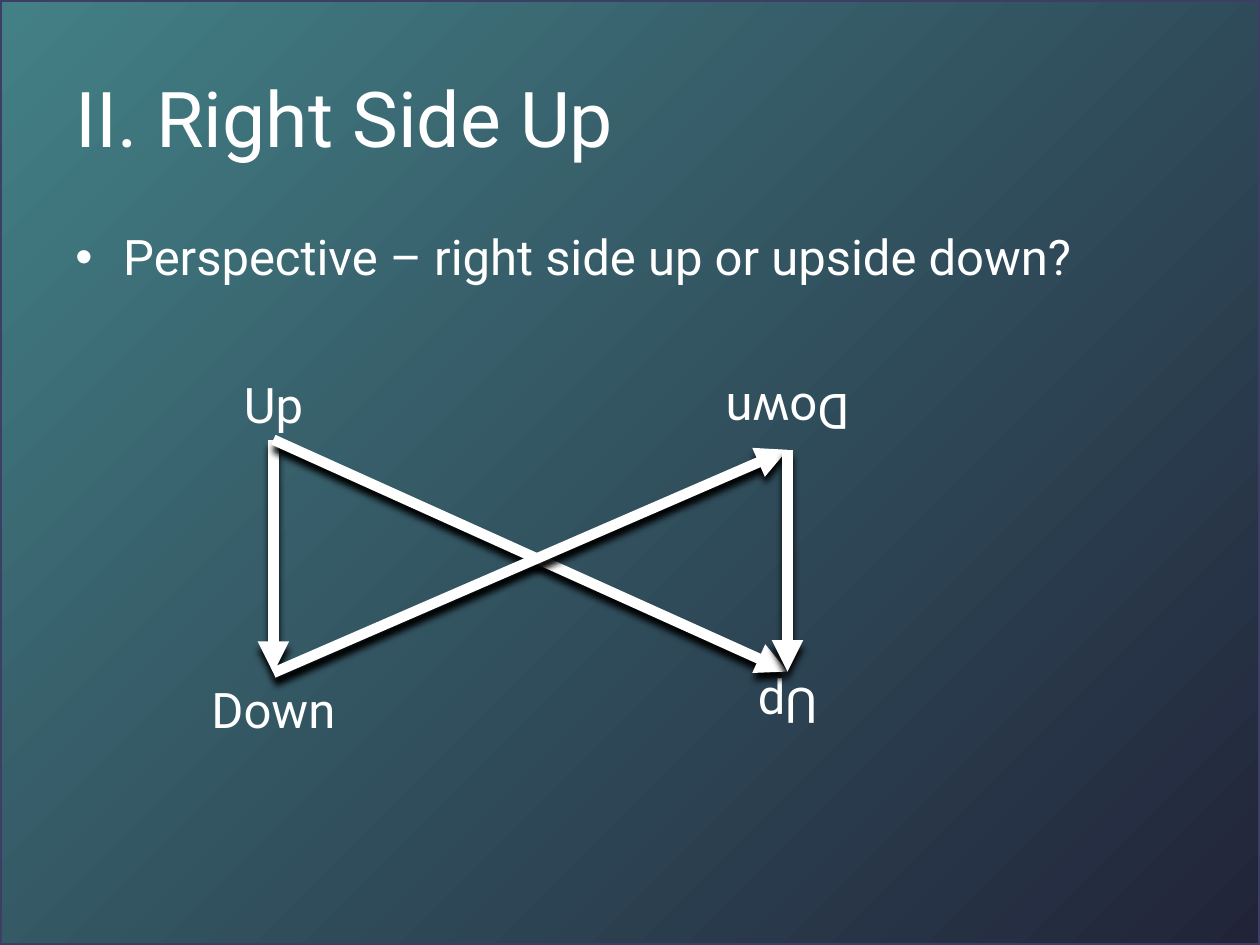
from dataclasses import dataclass

from lxml.etree import SubElement
from pptx import Presentation
from pptx.dml.color import RGBColor
from pptx.enum.shapes import MSO_CONNECTOR, MSO_SHAPE
from pptx.enum.text import MSO_ANCHOR, MSO_AUTO_SIZE, PP_ALIGN
from pptx.oxml import parse_xml
from pptx.oxml.ns import nsdecls, qn
from pptx.util import Inches, Pt

COLORS = {
    "teal": "438086",
    "navy": "212439",
    "frame": "3D3E66",
    "white": "FFFFFF",
    "shadow": "000000",
}
FONT = "Roboto"
LABEL_WIDTH, LABEL_HEIGHT = 2.5, 0.57
TOP, BOTTOM = 0, 2  # connection sites


@dataclass(frozen=True)
class Label:
    text: str
    left: float
    top: float
    rotation: int = 0

    def edge(self, side: int) -> tuple:
        """Middle of the visible top or bottom side."""
        y = self.top + (LABEL_HEIGHT if side == BOTTOM else 0)
        return Inches(self.left + LABEL_WIDTH / 2), Inches(y)

    def site(self, side: int) -> int:
        """A label turned upside down swaps its top and bottom sites."""
        return BOTTOM - side if self.rotation else side


@dataclass(frozen=True)
class Arrow:
    start: str
    start_side: int
    end: str
    end_side: int


LABELS = {
    "left up": Label("Up", 0.92, 2.92),
    "left down": Label("Down", 0.92, 5.34),
    "right up": Label("Up", 5, 5.33, 180),
    "right down": Label("Down", 5, 3, 180),
}
ARROWS = [
    Arrow("left up", BOTTOM, "left down", TOP),
    Arrow("left up", BOTTOM, "right up", TOP),
    Arrow("left down", TOP, "right down", BOTTOM),
    Arrow("right down", BOTTOM, "right up", TOP),
]


def rgb(name: str) -> RGBColor:
    return RGBColor.from_string(COLORS[name])


def paint_background(page) -> None:
    fill = page.background.fill
    fill.gradient()
    for stop, name, position in zip(fill.gradient_stops, ("teal", "navy"), (0, 1)):
        stop.color.rgb = rgb(name)
        stop.position = position
    # Spread the gradient from the top left corner
    gradient = page.background._cSld.find(".//" + qn("a:gradFill"))
    gradient.replace(gradient.find(qn("a:lin")), parse_xml(
        f'<a:path {nsdecls("a")} path="circle">'
        '<a:fillToRect r="100000" b="100000"/></a:path>'))


def add_frame(page, width, height) -> None:
    frame = page.shapes.add_shape(MSO_SHAPE.RECTANGLE, 0, 0, width, height)
    frame.shadow.inherit = False
    frame.fill.background()
    frame.line.color.rgb = rgb("frame")
    frame.line.width = Pt(2)


def add_text(page, text: str, left: float, top: float, width: float,
             height: float, size: int = 28, bullet: bool = False, **frame_format):
    box = page.shapes.add_textbox(*map(Inches, (left, top, width, height)))
    frame = box.text_frame
    for name, value in {"word_wrap": True, **frame_format}.items():
        setattr(frame, name, value)
    para = frame.paragraphs[0]
    if bullet:
        properties = para._p.get_or_add_pPr()
        properties.set("marL", str(Inches(0.38)))
        properties.set("indent", str(Inches(-0.38)))
        SubElement(properties, qn("a:buFont"), typeface="Arial")
        SubElement(properties, qn("a:buChar"), char="•")
    span = para.add_run()
    span.text = text
    for name, value in {"name": FONT, "size": Pt(size)}.items():
        setattr(span.font, name, value)
    span.font.color.rgb = rgb("white")
    return box


def add_label(page, label: Label):
    box = add_text(page, label.text, label.left, label.top, LABEL_WIDTH,
                   LABEL_HEIGHT, auto_size=MSO_AUTO_SIZE.SHAPE_TO_FIT_TEXT)
    box.text_frame.paragraphs[0].alignment = PP_ALIGN.CENTER
    box.rotation = label.rotation
    return box


def add_arrow(page, arrow: Arrow, boxes: dict) -> None:
    start, end = LABELS[arrow.start], LABELS[arrow.end]
    begin_point, end_point = start.edge(arrow.start_side), end.edge(arrow.end_side)
    connector = page.shapes.add_connector(
        MSO_CONNECTOR.STRAIGHT, *begin_point, *end_point)
    connector.begin_connect(boxes[arrow.start], start.site(arrow.start_side))
    connector.end_connect(boxes[arrow.end], end.site(arrow.end_side))
    # Joining ignores rotation, so put the ends back on the visible sides
    connector.begin_x, connector.begin_y = begin_point
    connector.end_x, connector.end_y = end_point
    connector.line.color.rgb = rgb("white")
    connector.line.width = Pt(6)
    SubElement(connector.line._get_or_add_ln(), qn("a:tailEnd"), type="triangle")
    connector._element.spPr.append(parse_xml(
        f'<a:effectLst {nsdecls("a")}>'
        f'<a:outerShdw blurRad="{Pt(4)}" dist="{Pt(4)}" dir="5400000">'
        f'<a:srgbClr val="{COLORS["shadow"]}"/></a:outerShdw></a:effectLst>'))


def main() -> None:
    deck = Presentation()
    deck.slide_width, deck.slide_height = Inches(10), Inches(7.5)
    page = deck.slides.add_slide(deck.slide_layouts[6])

    # Backdrop
    paint_background(page)
    add_frame(page, deck.slide_width, deck.slide_height)

    # Title and bullet
    add_text(page, "II. Right Side Up", 0.5, 0.3, 9, 1.25, size=44,
             vertical_anchor=MSO_ANCHOR.MIDDLE)
    add_text(page, "Perspective – right side up or upside down?",
             0.5, 1.75, 9, 4.95, bullet=True)

    # Crossed diagram
    boxes = {key: add_label(page, label) for key, label in LABELS.items()}
    for arrow in ARROWS:
        add_arrow(page, arrow, boxes)

    deck.save("out.pptx")


if __name__ == "__main__":
    main()
